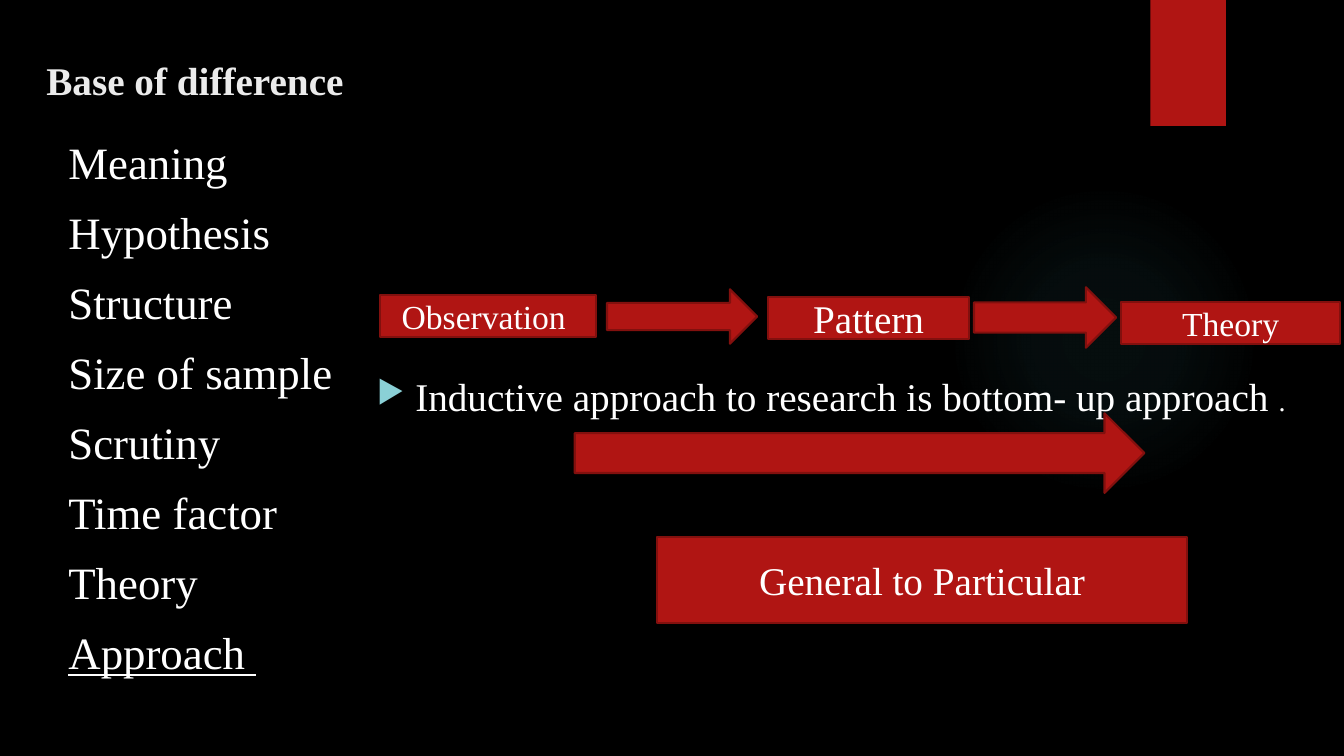
import pptx
import pptx.util
import pptx.dml.color
import pptx.enum.shapes
import pptx.enum.text
import lxml.etree
from dataclasses import dataclass

Inches, Pt = pptx.util.Inches, pptx.util.Pt
SHAPES = pptx.enum.shapes.MSO_SHAPE
ALIGN, ANCHOR = pptx.enum.text.PP_ALIGN, pptx.enum.text.MSO_ANCHOR

HEADING = "Base of difference"
BASES = ["Meaning", "Hypothesis", "Structure", "Size of sample",
         "Scrutiny", "Time factor", "Theory", "Approach "]
CURRENT_BASE = BASES[-1]
STATEMENT = [("Inductive approach to research is bottom- up approach ", 28), (".", 20)]

# Places are left, top, width, height in inches
GLOW = (9.41, 1.83, 3.08, 3.08)
RIBBON = (11.41, 0, 0.75, 1.25)
HEADING_PLACE = (0.36, 0.44, 4.3, 0.64)
STATEMENT_PLACE = (3.64, 1.39, 9.31, 5.33)
BASES_PLACE = (0.58, 1.26, 3.19, 5.41)
ARROWS = [(6.02, 2.87, 1.49, 0.54), (9.66, 2.85, 1.41, 0.6), (5.7, 4.1, 5.65, 0.79)]
STEPS = [
    ("Observation ", 24, (3.77, 2.93, 2.14, 0.41)),
    ("Pattern", 28, (7.62, 2.95, 1.99, 0.41)),
    ("Theory", 24, (11.12, 3, 2.17, 0.41)),
    ("General to Particular", 28, (6.52, 5.33, 5.25, 0.85)),
]


@dataclass(frozen=True)
class Theme:
    font: str = "Times New Roman"
    background: str = "000000"
    red: str = "B01513"
    outline: str = "82100E"
    heading: str = "EBEBEB"
    text: str = "FFFFFF"
    bullet: str = "8AD0D6"
    glow: str = "50B9C1"
    heading_size: int = 28
    base_size: int = 32


THEME = Theme()
A = "http://schemas.openxmlformats.org/drawingml/2006/main"


def rgb(colour):
    return pptx.dml.color.RGBColor.from_string(colour)


def box(place):
    return [Inches(length) for length in place]


def add_run(paragraph, text, size, colour=THEME.text):
    run = paragraph.add_run()
    run.text = text
    run.font.name = THEME.font
    run.font.size = Pt(size)
    run.font.color.rgb = rgb(colour)
    return run


def add_red_shape(slide, kind, place, outlined=True):
    shape = slide.shapes.add_shape(kind, *box(place))
    shape.shadow.inherit = False
    shape.fill.solid()
    shape.fill.fore_color.rgb = rgb(THEME.red)
    if outlined:
        shape.line.color.rgb = rgb(THEME.outline)
        shape.line.width = Pt(1.5)
    else:
        shape.line.fill.background()
    return shape


def add_glow(slide):
    """Add the soft round light, fading outwards through transparent stops."""
    glow = slide.shapes.add_shape(SHAPES.OVAL, *box(GLOW))
    glow.shadow.inherit = False
    glow.line.fill.background()
    stops = "".join(
        f'<a:gs pos="{pos}000"><a:srgbClr val="{THEME.glow}">'
        f'<a:alpha val="{alpha}000"/></a:srgbClr></a:gs>'
        for pos, alpha in [(0, 7), (36, 6), (69, 0), (100, 0)])
    gradient = lxml.etree.fromstring(
        f'<a:gradFill xmlns:a="{A}"><a:gsLst>{stops}</a:gsLst><a:path path="circle">'
        '<a:fillToRect l="50000" t="50000" r="50000" b="50000"/></a:path></a:gradFill>')
    glow._element.spPr.find(f"{{{A}}}prstGeom").addnext(gradient)


def add_heading(slide):
    title = slide.shapes.title
    title.left, title.top, title.width, title.height = box(HEADING_PLACE)
    title.text_frame.vertical_anchor = ANCHOR.BOTTOM
    paragraph = title.text_frame.paragraphs[0]
    paragraph.alignment = ALIGN.LEFT
    add_run(paragraph, HEADING, THEME.heading_size, THEME.heading).font.bold = True


def add_text_frame(slide, place):
    frame = slide.shapes.add_textbox(*box(place)).text_frame
    frame.word_wrap = True
    return frame


def add_statement(slide):
    frame = add_text_frame(slide, STATEMENT_PLACE)
    frame.vertical_anchor = ANCHOR.MIDDLE
    frame.margin_bottom = Inches(0.3)
    paragraph = frame.paragraphs[0]
    paragraph.alignment = ALIGN.JUSTIFY
    properties = paragraph._p.get_or_add_pPr()
    properties.set("marL", str(Inches(0.38)))
    properties.set("indent", str(Inches(-0.38)))
    colour = lxml.etree.SubElement(properties, f"{{{A}}}buClr")
    lxml.etree.SubElement(colour, f"{{{A}}}srgbClr", val=THEME.bullet)
    lxml.etree.SubElement(properties, f"{{{A}}}buSzPct", val="80000")
    lxml.etree.SubElement(properties, f"{{{A}}}buChar", char="▶")
    for text, size in STATEMENT:
        add_run(paragraph, text, size)


def add_bases(slide):
    frame = add_text_frame(slide, BASES_PLACE)
    frame.margin_top = Inches(0.08)
    for index, base in enumerate(BASES):
        paragraph = frame.add_paragraph() if index else frame.paragraphs[0]
        if index:
            paragraph.space_before = Pt(11.6)
        run = add_run(paragraph, base, THEME.base_size)
        if base == CURRENT_BASE:
            run.font.underline = True


def add_step(slide, label, size, place):
    frame = add_red_shape(slide, SHAPES.RECTANGLE, place).text_frame
    frame.word_wrap = True
    frame.vertical_anchor = ANCHOR.MIDDLE
    frame.paragraphs[0].alignment = ALIGN.CENTER
    add_run(frame.paragraphs[0], label, size)


def main():
    deck = pptx.Presentation()
    deck.slide_width, deck.slide_height = Inches(13.33), Inches(7.5)
    slide = deck.slides.add_slide(deck.slide_layouts[5])
    slide.background.fill.solid()
    slide.background.fill.fore_color.rgb = rgb(THEME.background)

    add_glow(slide)
    add_red_shape(slide, SHAPES.RECTANGLE, RIBBON, outlined=False)
    add_heading(slide)
    add_statement(slide)
    add_bases(slide)
    for place in ARROWS:
        add_red_shape(slide, SHAPES.RIGHT_ARROW, place)
    for label, size, place in STEPS:
        add_step(slide, label, size, place)
    deck.save("out.pptx")


if __name__ == "__main__":
    main()
